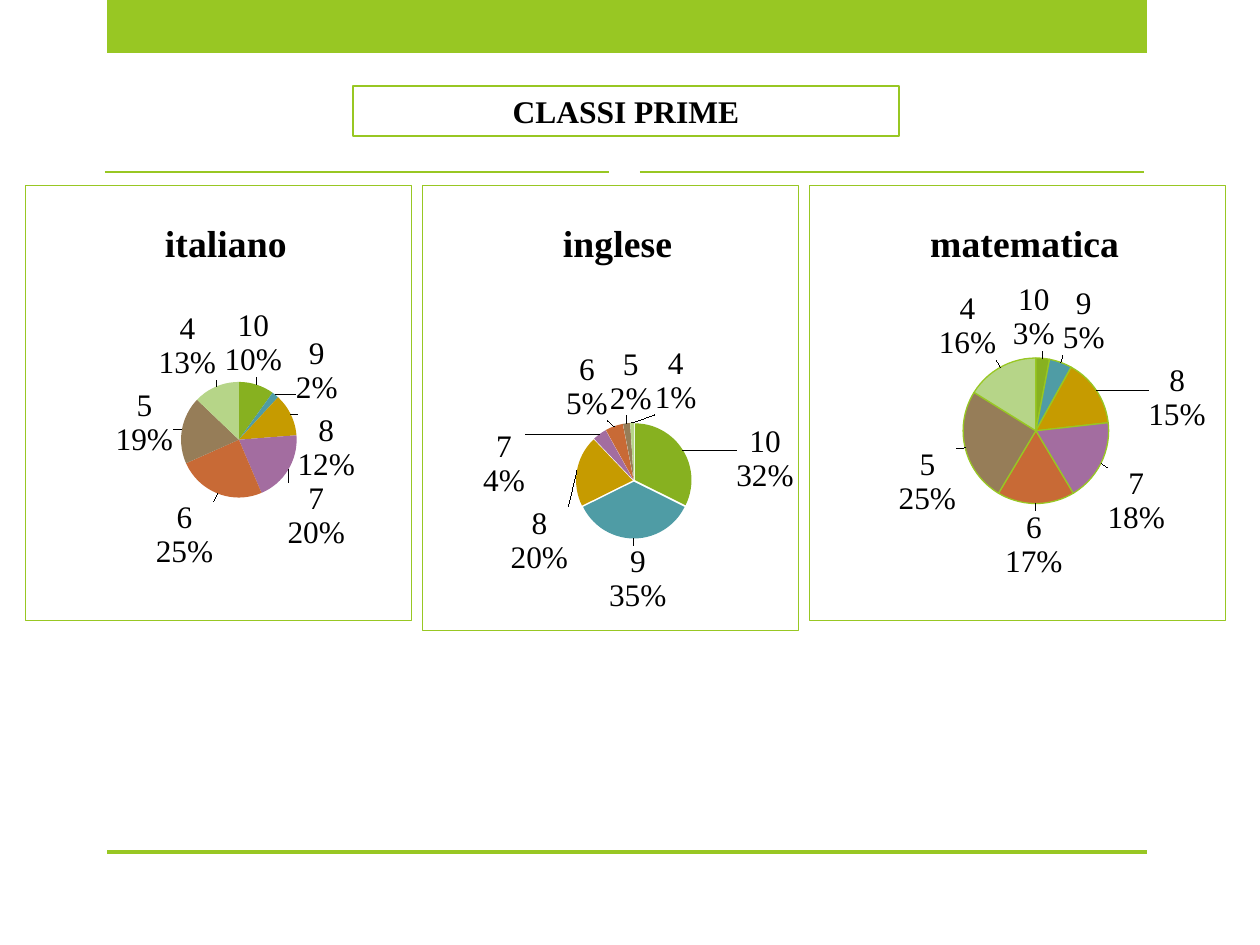
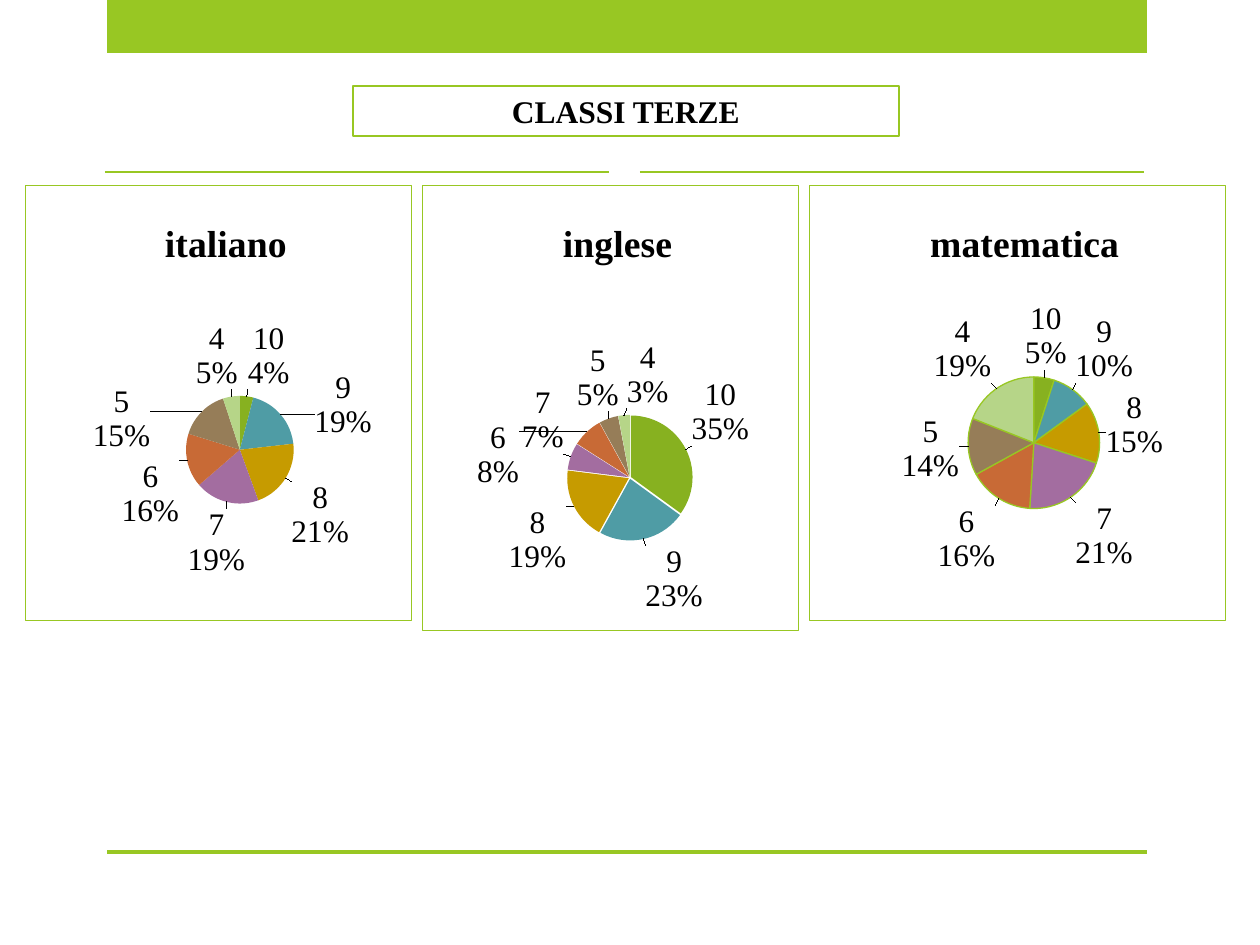
import math
from pptx import Presentation
from pptx.chart import data as chart_data
from pptx.dml.color import RGBColor
from pptx.enum import chart as charts, shapes, text
from pptx.oxml import parse_xml
from pptx.oxml.ns import nsdecls, qn
from pptx.util import Pt

PX = 914400 // 126
FONT = "Times New Roman"
GREEN = RGBColor(0x98, 0xC7, 0x23)
BLACK = RGBColor(0, 0, 0)
SLICES = [
    RGBColor(0x87, 0xB1, 0x20),
    RGBColor(0x4F, 0x9C, 0xA5),
    RGBColor(0xC6, 0x9B, 0x00),
    RGBColor(0xA3, 0x6D, 0xA0),
    RGBColor(0xC8, 0x6A, 0x36),
    RGBColor(0x96, 0x7D, 0x58),
    RGBColor(0xB6, 0xD5, 0x88),
]
GRADES = ["10", "9", "8", "7", "6", "5", "4"]
LABEL_HEIGHT = 69
LABEL_GAP = 7

SUBJECTS = {
    "italiano": dict(box=(25, 185, 387, 436), heading_width=121),
    "inglese": dict(box=(422, 185, 377, 446), heading_width=109, explosion=2),
    "matematica": dict(box=(809, 185, 417, 436), heading_width=189, outlined=True),
}
CLASSES = {
    "CLASSI PRIME": {
        "italiano": dict(
            shares=[10, 2, 12, 20, 25, 19, 13], centre=(214, 255), radius=58,
            spots=[(228, 158), (292, 186), (301, 263), (291, 332),
                   (160, 351), (120, 238), (163, 161)]),
        "inglese": dict(
            shares=[32, 35, 20, 4, 5, 2, 1], centre=(212, 296), radius=58,
            spots=[(343, 274), (216, 395), (118, 356), (82, 279),
                   (165, 202), (209, 197), (254, 196)]),
        "matematica": dict(
            shares=[3, 5, 15, 18, 17, 25, 16], centre=(227, 246), radius=73,
            spots=[(225, 132), (275, 136), (368, 213), (327, 317),
                   (225, 360), (119, 298), (159, 141)]),
    },
    "CLASSI TERZE": {
        "italiano": dict(
            shares=[4, 19, 21, 19, 16, 15, 5], centre=(215, 265), radius=54,
            spots=[(244, 171), (318, 220), (295, 331), (192, 358),
                   (126, 310), (97, 234), (192, 171)]),
        "inglese": dict(
            shares=[35, 23, 19, 7, 8, 5, 3], centre=(208, 293), radius=63,
            spots=[(298, 227), (252, 395), (116, 356), (121, 235),
                   (76, 270), (176, 193), (226, 190)]),
        "matematica": dict(
            shares=[5, 10, 15, 21, 16, 14, 19], centre=(225, 258), radius=66,
            spots=[(237, 151), (295, 164), (325, 240), (295, 352),
                   (158, 355), (122, 264), (154, 164)]),
    },
}


def emu(*lengths):
    return [length * PX for length in lengths]


def write(frame, words, size=18, bold=False, align=text.PP_ALIGN.CENTER):
    paragraph = frame.paragraphs[0]
    paragraph.alignment = align
    run = paragraph.add_run()
    run.text = words
    run.font.name = FONT
    run.font.size = Pt(size)
    run.font.bold = bold
    run.font.color.rgb = BLACK


def add_rect(slide, box, fill=None, line=None):
    rect = slide.shapes.add_shape(shapes.MSO_SHAPE.RECTANGLE, *emu(*box))
    rect.shadow.inherit = False
    if fill is None:
        rect.fill.background()
    else:
        rect.fill.solid()
        rect.fill.fore_color.rgb = fill
    if line is None:
        rect.line.fill.background()
    else:
        rect.line.color.rgb = line
        rect.line.width = Pt(0.75)
    return rect


def add_frame(slide):
    add_rect(slide, (107, 0, 1040, 53), fill=GREEN)
    add_rect(slide, (107, 850, 1040, 4), fill=GREEN)
    for left in (105, 640):
        rule = slide.shapes.add_connector(
            shapes.MSO_CONNECTOR.STRAIGHT, *emu(left, 172, left + 504, 172))
        rule.line.color.rgb = GREEN
        rule.line.width = Pt(1.25)
        rule._element.spPr.append(parse_xml(f'<a:effectLst {nsdecls("a")}/>'))


def add_heading(slide, words):
    heading = add_rect(slide, (353, 86, 546, 50), line=GREEN)
    heading.text_frame.word_wrap = True
    heading.text_frame.vertical_anchor = text.MSO_ANCHOR.MIDDLE
    write(heading.text_frame, words, bold=True)


def layout_xml(x, y, modes="", extent=""):
    return (f'<c:layout {nsdecls("c")}><c:manualLayout>{modes}'
            f'<c:x val="{x:.4f}"/><c:y val="{y:.4f}"/>{extent}'
            '</c:manualLayout></c:layout>')


EDGES = '<c:xMode val="edge"/><c:yMode val="edge"/>'


def side(amount):
    if abs(amount) < math.sin(math.radians(5)):
        return 0
    return math.copysign(1, amount)


def label_offsets(shares, centre, radius, spots):
    total = sum(shares)
    before = 0
    for share, (x, y) in zip(shares, spots):
        angle = 2 * math.pi * (before + share / 2) / total
        across, down = math.sin(angle), -math.cos(angle)
        width = 57 if share >= 10 else 42
        reach = radius + LABEL_GAP
        usual_x = centre[0] + reach * across + side(across) * width / 2
        usual_y = centre[1] + reach * down + side(down) * LABEL_HEIGHT / 2
        yield x - usual_x, y - usual_y
        before += share


def labels_xml(offsets, width, height):
    shown = ('<c:dLblPos val="bestFit"/><c:showLegendKey val="0"/>'
             '<c:showVal val="0"/><c:showCatName val="1"/><c:showSerName val="0"/>'
             '<c:showPercent val="1"/><c:showBubbleSize val="0"/>'
             '<c:separator>\n</c:separator>')
    labels = "".join(
        f'<c:dLbl><c:idx val="{i}"/>{layout_xml(x / width, y / height)}{shown}</c:dLbl>'
        for i, (x, y) in enumerate(offsets))
    return (f'<c:dLbls {nsdecls("c")}>{labels}'
            f'<c:numFmt formatCode="0%" sourceLinked="0"/>{shown}'
            '<c:showLeaderLines val="1"/></c:dLbls>')


def add_subject(slide, subject, box, heading_width, shares, centre, radius, spots,
                explosion=0, outlined=False):
    width, height = box[2:]
    grades = chart_data.CategoryChartData()
    grades.categories = GRADES
    grades.add_series(subject, shares)
    chart = slide.shapes.add_chart(
        charts.XL_CHART_TYPE.PIE, *emu(*box), grades).chart
    chart.has_legend = False
    chart.font.name = FONT
    chart.font.size = Pt(18)
    chart.font.color.rgb = BLACK
    chart.has_title = True
    write(chart.chart_title.text_frame, subject, size=21.6, bold=True)
    chart.chart_title.include_in_layout = False

    pie = chart.plots[0]
    pie.vary_by_categories = True
    series = pie.series[0]
    for i, colour in enumerate(SLICES):
        piece = series.points[i].format
        piece.fill.solid()
        piece.fill.fore_color.rgb = colour
        if outlined:
            piece.line.color.rgb = GREEN
            piece.line.width = Pt(0.75)
        else:
            piece.line.fill.background()

    ser = series._element
    if explosion:
        ser.find(qn("c:dPt")).addprevious(
            parse_xml(f'<c:explosion {nsdecls("c")} val="{explosion}"/>'))
    offsets = label_offsets(shares, centre, radius, spots)
    ser.find(qn("c:cat")).addprevious(parse_xml(labels_xml(offsets, width, height)))

    space = chart._chartSpace
    place(space.find(".//" + qn("c:plotArea")), 0, layout_xml(
        (centre[0] - radius) / width, (centre[1] - radius) / height,
        '<c:layoutTarget val="inner"/>' + EDGES,
        f'<c:w val="{2 * radius / width:.4f}"/><c:h val="{2 * radius / height:.4f}"/>'))
    place(space.find(".//" + qn("c:title")), 1, layout_xml(
        (width - heading_width) / 2 / width, 27 / height, EDGES))
    space.find(qn("c:chart")).addnext(parse_xml(
        f'<c:spPr {nsdecls("c", "a")}><a:noFill/><a:ln w="{Pt(0.75)}"><a:solidFill>'
        f'<a:srgbClr val="{GREEN}"/></a:solidFill></a:ln></c:spPr>'))


def place(parent, position, xml):
    for layout in parent.findall(qn("c:layout")):
        parent.remove(layout)
    parent.insert(position, parse_xml(xml))


def add_class(deck, name, results):
    slide = deck.slides.add_slide(deck.slide_layouts[6])
    add_frame(slide)
    for subject, style in SUBJECTS.items():
        add_subject(slide, subject, **style, **results[subject])
    add_heading(slide, name)


def main():
    deck = Presentation()
    deck.slide_width, deck.slide_height = emu(1260, 945)
    for name, results in CLASSES.items():
        add_class(deck, name, results)
    deck.save("out.pptx")


if __name__ == "__main__":
    main()
